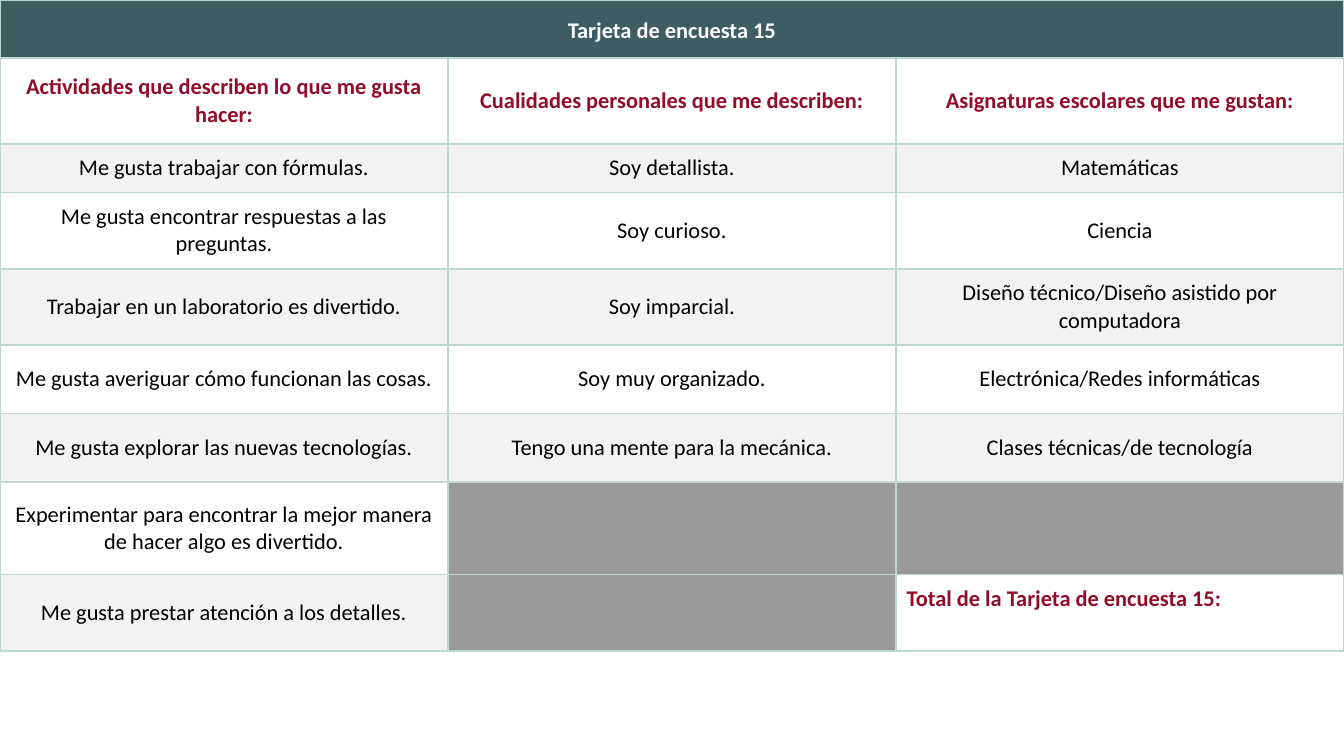
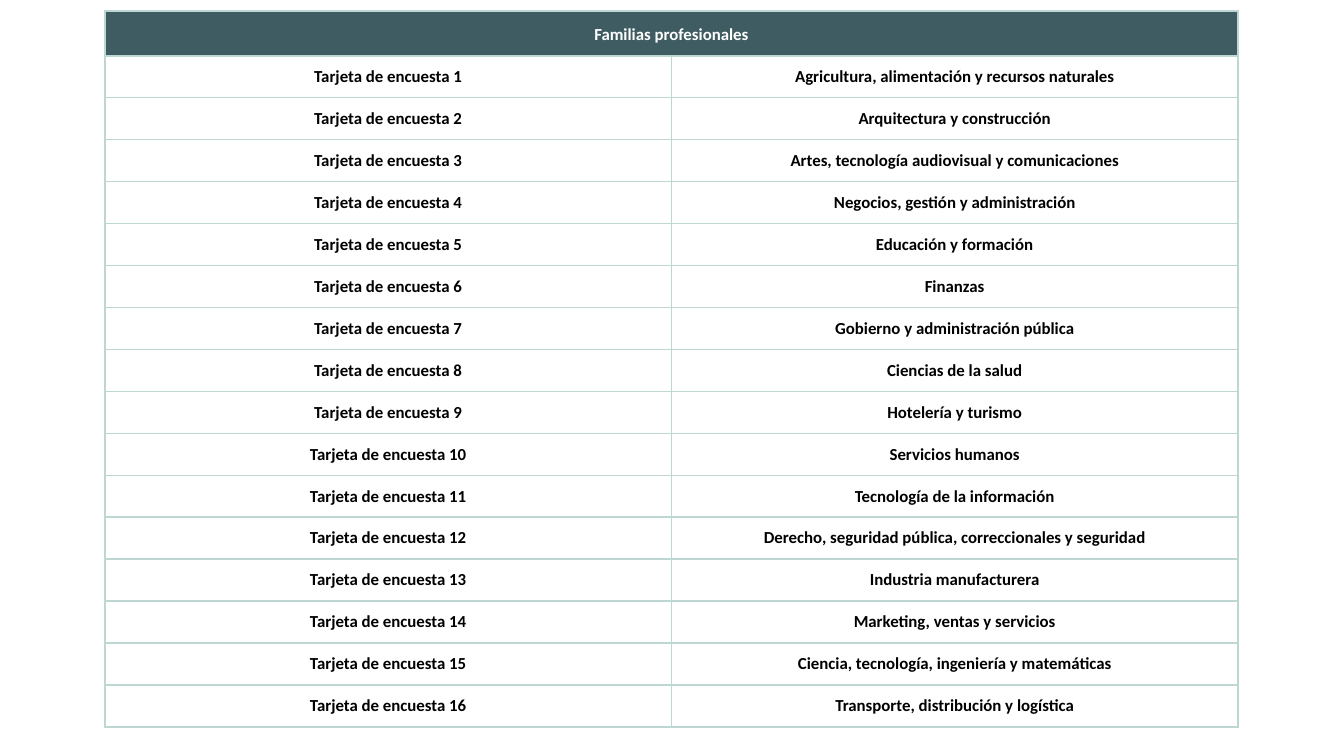
from lxml.etree import SubElement
from pptx import Presentation
from pptx.dml.color import RGBColor
from pptx.enum.text import MSO_ANCHOR as Anchor, PP_ALIGN as Align
from pptx.oxml.ns import qn
from pptx.util import Inches, Pt

TEAL = RGBColor(0x3E, 0x5C, 0x61)
MINT = RGBColor(0xBE, 0xD7, 0xD3)
WINE = RGBColor(0x91, 0x0D, 0x28)
PALE = RGBColor(0xF3, 0xF3, 0xF3)
GRAY = RGBColor(0x99, 0x99, 0x99)
WHITE = RGBColor(0xFF, 0xFF, 0xFF)
BLACK = RGBColor(0, 0, 0)
FONT = "Calibri"
PAD = Inches(0.08)

HEADS = [
    "Actividades que describen lo que me gusta hacer:",
    "Cualidades personales que me describen:",
    "Asignaturas escolares que me gustan:",
]
TRAITS = [
    ["Me gusta trabajar con fórmulas.", "Soy detallista.", "Matemáticas"],
    ["Me gusta encontrar respuestas a las preguntas.", "Soy curioso.", "Ciencia"],
    ["Trabajar en un laboratorio es divertido.", "Soy imparcial.",
     "Diseño técnico/Diseño asistido por computadora"],
    ["Me gusta averiguar cómo funcionan las cosas.", "Soy muy organizado.",
     "Electrónica/Redes informáticas"],
    ["Me gusta explorar las nuevas tecnologías.", "Tengo una mente para la mecánica.",
     "Clases técnicas/de tecnología"],
    ["Experimentar para encontrar la mejor manera de hacer algo es divertido.", "", ""],
    ["Me gusta prestar atención a los detalles.", "", ""],
]
FIELDS = [
    "Agricultura, alimentación y recursos naturales",
    "Arquitectura y construcción",
    "Artes, tecnología audiovisual y comunicaciones",
    "Negocios, gestión y administración",
    "Educación y formación",
    "Finanzas",
    "Gobierno y administración pública",
    "Ciencias de la salud",
    "Hotelería y turismo",
    "Servicios humanos",
    "Tecnología de la información",
    "Derecho, seguridad pública, correccionales y seguridad",
    "Industria manufacturera",
    "Marketing, ventas y servicios",
    "Ciencia, tecnología, ingeniería y matemáticas",
    "Transporte, distribución y logística",
]


def add_edges(cell):
    """Draw a thin mint border on all four sides of a cell."""
    props = cell._tc.get_or_add_tcPr()
    for side in ("a:lnL", "a:lnR", "a:lnT", "a:lnB"):
        line = SubElement(props, qn(side), w=str(Pt(1)))
        fill = SubElement(line, qn("a:solidFill"))
        SubElement(fill, qn("a:srgbClr"), val=str(MINT))


def fill_cell(cell, text, size, color=BLACK, bold=False, fill=WHITE):
    """Fill a cell and write its centred text."""
    cell.fill.solid()
    cell.fill.fore_color.rgb = fill
    cell.text_frame.text = text
    para = cell.text_frame.paragraphs[0]
    para.alignment = Align.CENTER
    for run in para.runs:
        run.font.name = FONT
        run.font.size = Pt(size)
        run.font.bold = bold
        run.font.color.rgb = color


def add_grid(slide, left, top, width, height, cols, rows, title, size):
    """Add a bordered table with a merged title row and return it."""
    frame = slide.shapes.add_table(len(rows), cols, Inches(left), Inches(top),
                                   Inches(width), Inches(height))
    grid = frame.table
    grid.first_row = grid.horz_banding = False
    for row, tall in zip(grid.rows, rows):
        row.height = Inches(tall)
    frame.height = Inches(height)
    for cell in grid.iter_cells():
        cell.margin_left = cell.margin_right = PAD
        cell.margin_top = cell.margin_bottom = PAD
        cell.vertical_anchor = Anchor.MIDDLE
        add_edges(cell)
    head = grid.cell(0, 0)
    head.merge(grid.cell(0, cols - 1))
    fill_cell(head, title, size, WHITE, True, TEAL)
    para = head.text_frame.paragraphs[0]
    para.line_spacing = 1.15
    para.space_after = Pt(6)
    return grid


def add_survey(slide):
    """Build the survey card with its three lists and total cell."""
    rows = [0.43, 0.64, 0.33, 0.51, 0.51, 0.51, 0.51, 0.69, 0.57]
    grid = add_grid(slide, 0, 0, 10, 4.81, 3, rows, "Tarjeta de encuesta 15", 12)
    for col, text in enumerate(HEADS):
        fill_cell(grid.cell(1, col), text, 12, WINE, True)
    for row, texts in enumerate(TRAITS, 2):
        band = WHITE if row % 2 else PALE
        for col, text in enumerate(texts):
            fill_cell(grid.cell(row, col), text, 12, fill=band if text else GRAY)
    total = grid.cell(len(rows) - 1, 2)
    fill_cell(total, "Total de la Tarjeta de encuesta 15:", 12, WINE, True)
    total.text_frame.paragraphs[0].alignment = Align.LEFT
    total.vertical_anchor = Anchor.TOP


def add_fields(slide):
    """Build the list that pairs each survey card with a career field."""
    rows = [0.28, 0.3] + [0.22] * (len(FIELDS) - 1)
    grid = add_grid(slide, 0.78, 0.08, 8.43, 5.28, 2, rows, "Familias profesionales", 9)
    for row, field in enumerate(FIELDS, 1):
        fill_cell(grid.cell(row, 0), f"Tarjeta de encuesta {row}", 9, bold=True)
        fill_cell(grid.cell(row, 1), field, 9, bold=True)


def main():
    """Create both slides and save the deck."""
    deck = Presentation()
    deck.slide_width = Inches(10)
    deck.slide_height = deck.slide_width * 9 // 16
    blank = deck.slide_layouts[6]
    for build in (add_survey, add_fields):
        build(deck.slides.add_slide(blank))
    deck.save("out.pptx")


if __name__ == "__main__":
    main()
